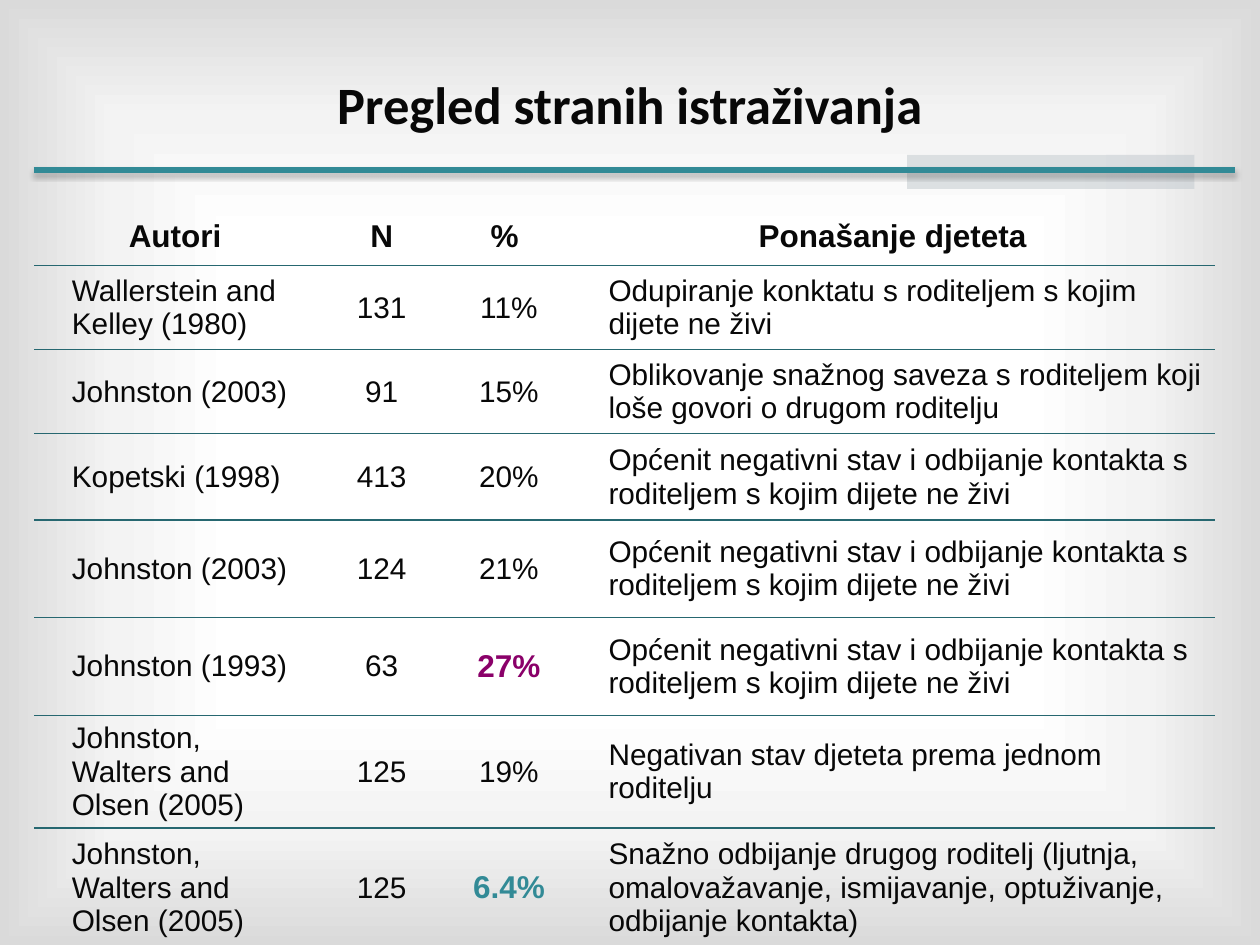
from pptx import Presentation
from pptx.dml.color import RGBColor
from pptx.enum.shapes import MSO_CONNECTOR, MSO_SHAPE
from pptx.enum.text import MSO_ANCHOR, PP_ALIGN
from pptx.oxml import parse_xml
from pptx.oxml.ns import nsdecls, qn
from pptx.util import Pt

CENTER, LEFT = PP_ALIGN.CENTER, PP_ALIGN.LEFT
MIDDLE = MSO_ANCHOR.MIDDLE
STRAIGHT = MSO_CONNECTOR.STRAIGHT
RECTANGLE = MSO_SHAPE.RECTANGLE
INK, TEAL, RULE, PURPLE = "080808", "328A96", "266770", "8A0069"
NO_STYLE = "{2D5ABB26-0587-4C30-8999-92F81FD0307C}"


def color(value):
    return RGBColor.from_string(value)


def add_span(para, text, font, size, tint, bold):
    span = para.add_run()
    span.text = text
    span.font.name = font
    span.font.size = Pt(size)
    span.font.color.rgb = color(tint)
    span.font.bold = bold


deck = Presentation()
deck.slide_width, deck.slide_height = Pt(720), Pt(540)
page = deck.slides.add_slide(deck.slide_layouts[5])

page.background.fill.gradient()
gradient = page.background._cSld.find(".//" + qn("a:gradFill"))
stops = [(0, "FFFFFF"), (50, "FFFFFF"), (76, "F3F3F3"), (100, "DADADA")]
stop_xml = "".join(
    f'<a:gs pos="{place * 1000}"><a:srgbClr val="{tint}"/></a:gs>' for place, tint in stops
)
gradient.getparent().replace(gradient, parse_xml(
    f'<a:gradFill {nsdecls("a")} rotWithShape="1"><a:gsLst>{stop_xml}</a:gsLst>'
    '<a:path path="shape"><a:fillToRect l="50000" t="50000" r="50000" b="50000"/></a:path>'
    "</a:gradFill>"
))

title = page.shapes.title
title.left, title.top, title.width, title.height = Pt(36), Pt(21.6), Pt(648), Pt(75.6)
title.text_frame.vertical_anchor = MIDDLE
title.text_frame.word_wrap = True
para = title.text_frame.paragraphs[0]
para.alignment = CENTER
add_span(para, "Pregled stranih istraživanja", "Calibri", 30, INK, True)

accent = page.shapes.add_shape(RECTANGLE, Pt(518.4), Pt(88.56), Pt(164.16), Pt(19.44))
accent.shadow.inherit = False
accent.line.fill.background()
accent.fill.solid()
accent.fill.fore_color.rgb = color("C3CACF")
tint = accent._element.spPr.find(qn("a:solidFill"))[0]
tint.append(parse_xml(f'<a:alpha {nsdecls("a")} val="54000"/>'))

divider = page.shapes.add_connector(STRAIGHT, Pt(19.44), Pt(97.2), Pt(705.6), Pt(97.2))
divider.line.color.rgb = color(TEAL)
divider.line.width = Pt(3)
divider._element.spPr.append(parse_xml(
    f'<a:effectLst {nsdecls("a")}>'
    f'<a:outerShdw blurRad="{Pt(3.1)}" dist="{Pt(1.8)}" dir="5400000" rotWithShape="0">'
    '<a:srgbClr val="000000"><a:alpha val="35000"/></a:srgbClr></a:outerShdw></a:effectLst>'
))

general = "Općenit negativni stav i odbijanje kontakta s roditeljem s kojim dijete ne živi"
studies = [
    ("Autori", "N", "% ", "Ponašanje djeteta"),
    ("Wallerstein and Kelley (1980)", "131", "11%",
     "Odupiranje konktatu s roditeljem s kojim dijete ne živi"),
    ("Johnston (2003)", "91", "15%",
     "Oblikovanje snažnog saveza s roditeljem koji loše govori o drugom roditelju"),
    ("Kopetski (1998)", "413", "20%", general),
    ("Johnston (2003)", "124", "21%", general),
    ("Johnston (1993)", "63", "27%", general),
    ("Johnston, Walters and Olsen (2005)", "125", "19%",
     "Negativan stav djeteta prema jednom roditelju"),
    ("Johnston, Walters and Olsen (2005)", "125", "6.4%",
     "Snažno odbijanje drugog roditelj (ljutnja, omalovažavanje, ismijavanje, "
     "optuživanje, odbijanje kontakta)"),
]
highlights = {"27%": PURPLE, "6.4%": TEAL}
widths = [161.28, 74.88, 70.56, 367.92]
heights = [33, 48, 48, 49.5, 55.5, 56, 48, 68.4]

frame = page.shapes.add_table(
    len(studies), len(widths), Pt(19.44), Pt(118.8), Pt(sum(widths)), Pt(sum(heights))
)
table = frame.table
table.first_row = table.horz_banding = False
table._tbl.tblPr.find(qn("a:tableStyleId")).text = NO_STYLE
for column, width in zip(table.columns, widths):
    column.width = Pt(width)

for row_index, study in enumerate(studies):
    table.rows[row_index].height = Pt(heights[row_index])
    for column_index, text in enumerate(study):
        cell = table.cell(row_index, column_index)
        cell.vertical_anchor = MIDDLE
        cell.fill.background()
        header = row_index == 0
        centered = header or column_index in (1, 2)
        strong = header or text in highlights
        para = cell.text_frame.paragraphs[0]
        para.alignment = CENTER if centered else LEFT
        margin, indent = (27, -27) if centered else (14.4, 0)
        properties = para._p.get_or_add_pPr()
        properties.set("marL", str(Pt(margin)))
        properties.set("indent", str(Pt(indent)))
        add_span(para, text, "Arial", 18 if strong else 17, highlights.get(text, INK), strong)
        if row_index < len(studies) - 1:
            cell._tc.get_or_add_tcPr().insert(0, parse_xml(
                f'<a:lnB {nsdecls("a")} w="{Pt(1)}"><a:solidFill>'
                f'<a:srgbClr val="{RULE}"/></a:solidFill></a:lnB>'
            ))

deck.save("out.pptx")
